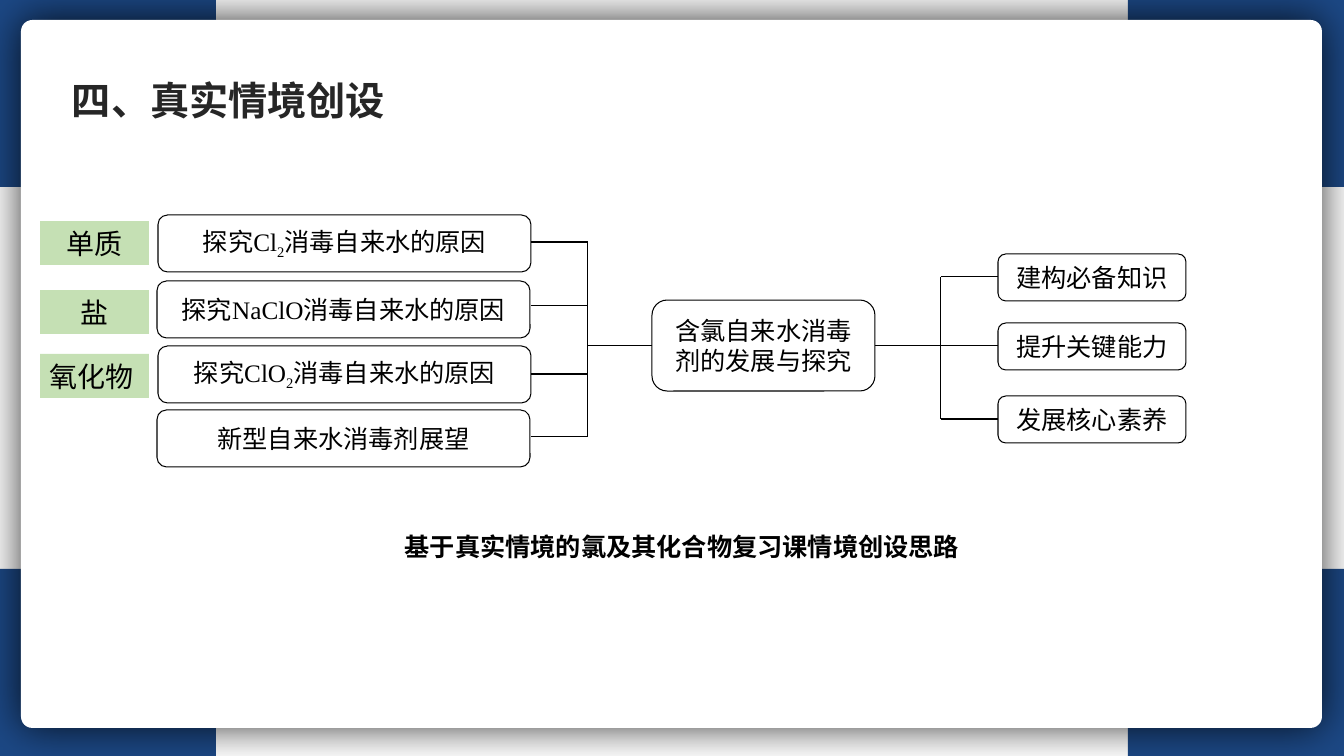
from lxml.etree import SubElement as Sub
from pptx import Presentation
from pptx.dml.color import RGBColor as RGB
from pptx.enum.shapes import MSO_CONNECTOR as Conn, MSO_SHAPE as Kind
from pptx.enum.text import MSO_ANCHOR as Anchor, PP_ALIGN as Align
from pptx.oxml.ns import qn
from pptx.util import Pt

# Content; "|" sets off a subscript
TITLE = "四、真实情境创设"
HUB = "含氯自来水消毒剂的发展与探究"
CAPTION = "基于真实情境的氯及其化合物复习课情境创设思路"
# text, left, top, line height
TASKS = [
    ("探究Cl|2|消毒自来水的原因", 158, 215, 242),
    ("探究NaClO消毒自来水的原因", 157, 281, 306),
    ("探究ClO|2|消毒自来水的原因", 158, 346, 374),
    ("新型自来水消毒剂展望", 157, 410, 437),
]
GOALS = [
    ("建构必备知识", 254, 277),
    ("提升关键能力", 323, 346),
    ("发展核心素养", 396, 419),
]
TAGS = [
    ("单质", 221, Align.CENTER),
    ("盐", 290, Align.CENTER),
    ("氧化物", 354, Align.LEFT),
]

COLORS = {"navy": "1C4885", "white": "FFFFFF", "black": "000000",
          "ink": "262626", "green": "C5E0B4"}
SANS, SERIF = "Noto Sans CJK SC", "Times New Roman"
WIDE, HIGH = 1344, 756
SCALE = 12192000 / WIDE
MID = 346                       # height of the hub line
LEFT, RIGHT = 588, 941          # the two trunk lines


def px(*nums):
    return [round(n * SCALE) for n in nums]


def color(name):
    return RGB.from_string(COLORS[name])


deck = Presentation()
deck.slide_width, deck.slide_height = px(WIDE, HIGH)
slide = deck.slides.add_slide(deck.slide_layouts[6])
shapes = slide.shapes


def write(item, text, size=18, font=SANS, ink="black", bold=False,
          align=Align.CENTER, anchor=Anchor.MIDDLE, space=None):
    frame = item.text_frame
    frame.word_wrap = True
    frame.vertical_anchor = anchor
    para = frame.paragraphs[0]
    para.alignment = align
    if space:
        para.line_spacing = space
    for num, part in enumerate(text.split("|")):
        run = para.add_run()
        run.text = part
        run.font.size = Pt(size)
        run.font.name = font
        run.font.bold = bold
        run.font.color.rgb = color(ink)
        props = run._r.get_or_add_rPr()
        Sub(props, qn("a:ea")).set("typeface", SANS)
        if num % 2:
            props.set("baseline", "-25000")


def block(kind, box, fill=None, line=None):
    item = shapes.add_shape(kind, *px(*box))
    item.shadow.inherit = False
    if fill:
        item.fill.solid()
        item.fill.fore_color.rgb = color(fill)
    else:
        item.fill.background()
    if line:
        item.line.color.rgb = color(line)
        item.line.width = Pt(0.75)
    else:
        item.line.fill.background()
    return item


def label(text, box, **form):
    write(block(Kind.ROUNDED_RECTANGLE, box, line="black"), text, **form)


def rule(x1, y1, x2, y2):
    line = shapes.add_connector(Conn.STRAIGHT, *px(x1, y1, x2, y2))
    line.line.color.rgb = color("black")
    line.line.width = Pt(0.75)
    Sub(line._element.spPr, qn("a:effectLst"))


# Corners and the shaded panel
for x in (0, WIDE - 216):
    for y in (0, HIGH - 187):
        block(Kind.RECTANGLE, (x, y, 216, 187), fill="navy")
panel = block(Kind.ROUNDED_RECTANGLE, (21, 20, 1301, 708), fill="white")
panel.adjustments[0] = 0.016
glow = Sub(panel._element.spPr.find(qn("a:effectLst")), qn("a:outerShdw"))
glow.set("blurRad", str(px(42)[0]))
glow.set("algn", "ctr")
glow.set("rotWithShape", "0")
shade = Sub(glow, qn("a:srgbClr"))
shade.set("val", COLORS["black"])
Sub(shade, qn("a:alpha")).set("val", "80000")

# Title and caption
head = shapes.add_textbox(*px(62, 71, 348, 57))
write(head, TITLE, size=28, ink="ink", bold=True, align=Align.JUSTIFY,
      anchor=Anchor.TOP)
foot = shapes.add_textbox(*px(344, 511, 676, 50))
write(foot, CAPTION, bold=True, anchor=Anchor.TOP, space=1.5)

# Hub and its trunks
label(HUB, (652, 300, 223, 91))
rule(LEFT, MID, 652, MID)
rule(875, MID, RIGHT, MID)
rule(LEFT, TASKS[0][-1], LEFT, TASKS[-1][-1])
rule(RIGHT, GOALS[0][-1], RIGHT, GOALS[-1][-1])

# Tasks on the left, goals on the right
for text, x, y, bar in TASKS:
    rule(LEFT, bar, 531, bar)
    label(text, (x, y, 373, 57), font=SERIF)
for text, y, bar in GOALS:
    rule(RIGHT, bar, 998, bar)
    label(text, (998, y, 188, 47))

# Green tags
for text, y, align in TAGS:
    tag = block(Kind.RECTANGLE, (40, y, 109, 44), fill="green")
    write(tag, text, size=20, align=align)

deck.save("out.pptx")
